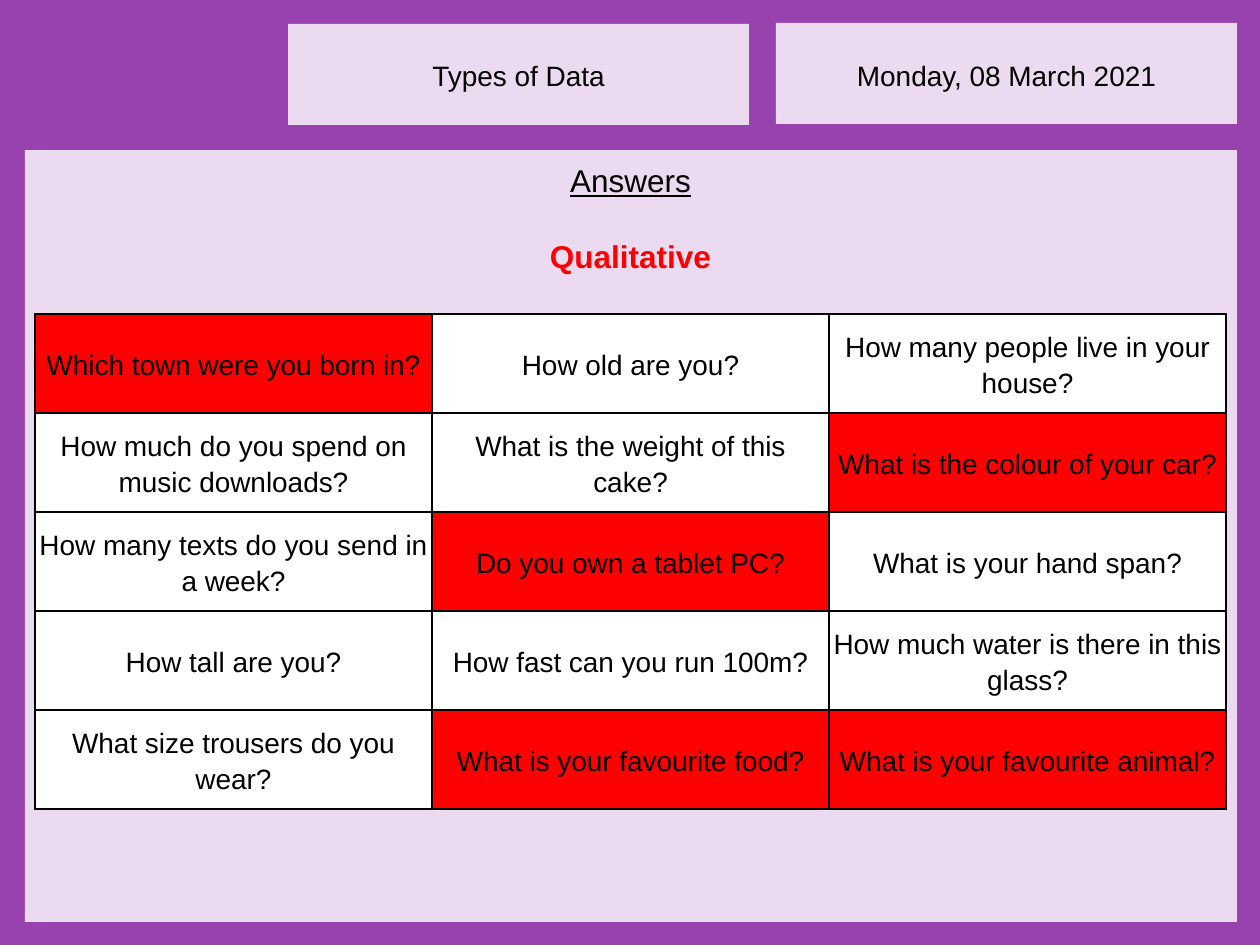
from pptx import Presentation
from pptx.dml.color import RGBColor
from pptx.enum.shapes import MSO_SHAPE as Shape
from pptx.enum.text import MSO_ANCHOR as Anchor, PP_ALIGN as Align
from pptx.oxml import parse_xml
from pptx.oxml.ns import nsdecls
from pptx.util import Pt

SCALE = 914400 / 126
PURPLE, LILAC = "9842B0", "ECDAF1"
BLACK, WHITE, RED = "000000", "FFFFFF", "FF0000"

ROWS = [
    ["Which town were you born in?", "How old are you?",
     "How many people live in your house?"],
    ["How much do you spend on music downloads?",
     "What is the weight of this cake?", "What is the colour of your car?"],
    ["How many texts do you send in a week?", "Do you own a tablet PC?",
     "What is your hand span?"],
    ["How tall are you?", "How fast can you run 100m?",
     "How much water is there in this glass?"],
    ["What size trousers do you wear?", "What is your favourite food?",
     "What is your favourite animal?"],
]
ANSWERS = {(0, 0), (1, 2), (2, 1), (4, 1), (4, 2)}


def px(n):
    return round(n * SCALE)


def color(code):
    return RGBColor.from_string(code)


def write(para, text, size=16, ink=BLACK, bold=False, line=False,
          before=0, after=0, lead=1.0):
    para.alignment = Align.CENTER
    para.space_before, para.space_after = Pt(before), Pt(after)
    para.line_spacing = lead
    run = para.add_run()
    run.text = text
    font = run.font
    font.name, font.size = "Arial", Pt(size)
    font.bold, font.underline = bold, line
    font.color.rgb = color(ink)


def border(cell):
    """Draw a thin black line on all four sides of a cell."""
    props = cell._tc.get_or_add_tcPr()
    for at, side in enumerate(("lnL", "lnR", "lnT", "lnB")):
        props.insert(at, parse_xml(
            f'<a:{side} {nsdecls("a")} w="{Pt(1)}"><a:solidFill>'
            f'<a:srgbClr val="{BLACK}"/></a:solidFill></a:{side}>'))


class Page:
    def __init__(self, deck):
        self.shapes = deck.slides.add_slide(deck.slide_layouts[6]).shapes

    def panel(self, x, y, w, h, fill):
        box = self.shapes.add_shape(Shape.RECTANGLE, px(x), px(y), px(w), px(h))
        box.shadow.inherit = False
        box.fill.solid()
        box.fill.fore_color.rgb = color(fill)
        box.line.fill.background()

    def label(self, x, y, w, h, *lines):
        """Add a text box; each line is its text and a dict of format."""
        frame = self.shapes.add_textbox(px(x), px(y), px(w), px(h)).text_frame
        frame.word_wrap = True
        for i, (text, style) in enumerate(lines):
            para = frame.add_paragraph() if i else frame.paragraphs[0]
            write(para, text, **style)

    def table(self, x, y, wide, high, rows, marked):
        count = len(rows[0])
        grid = self.shapes.add_table(len(rows), count, px(x), px(y),
                                     px(wide * count), px(high * len(rows))).table
        grid.first_row = grid.horz_banding = False
        for col in grid.columns:
            col.width = px(wide)
        for r, row in enumerate(rows):
            grid.rows[r].height = px(high)
            for c, text in enumerate(row):
                cell = grid.cell(r, c)
                cell.vertical_anchor = Anchor.MIDDLE
                cell.margin_left = cell.margin_right = px(4)
                cell.margin_top = cell.margin_bottom = px(1)
                cell.fill.solid()
                cell.fill.fore_color.rgb = color(RED if (r, c) in marked else WHITE)
                border(cell)
                write(cell.text_frame.paragraphs[0], text, after=10, lead=1.15)


def main():
    deck = Presentation()
    deck.slide_width, deck.slide_height = px(1260), px(945)
    page = Page(deck)
    page.panel(0, 0, 1260, 945, PURPLE)
    for x, y, text in ((776, 23, "Monday, 08 March 2021"),
                       (288, 24, "Types of Data")):
        page.panel(x, y, 461, 101, LILAC)
        page.label(x, 52, 461, 47, (text, {}))
    page.panel(25, 150, 1212, 772, LILAC)
    page.table(35, 314, 397, 99, ROWS, ANSWERS)
    page.label(35, 155, 1191, 127,
               ("Answers", dict(size=18, line=True)),
               ("Qualitative", dict(size=18, ink=RED, bold=True, before=22)))
    deck.save("out.pptx")


if __name__ == "__main__":
    main()
